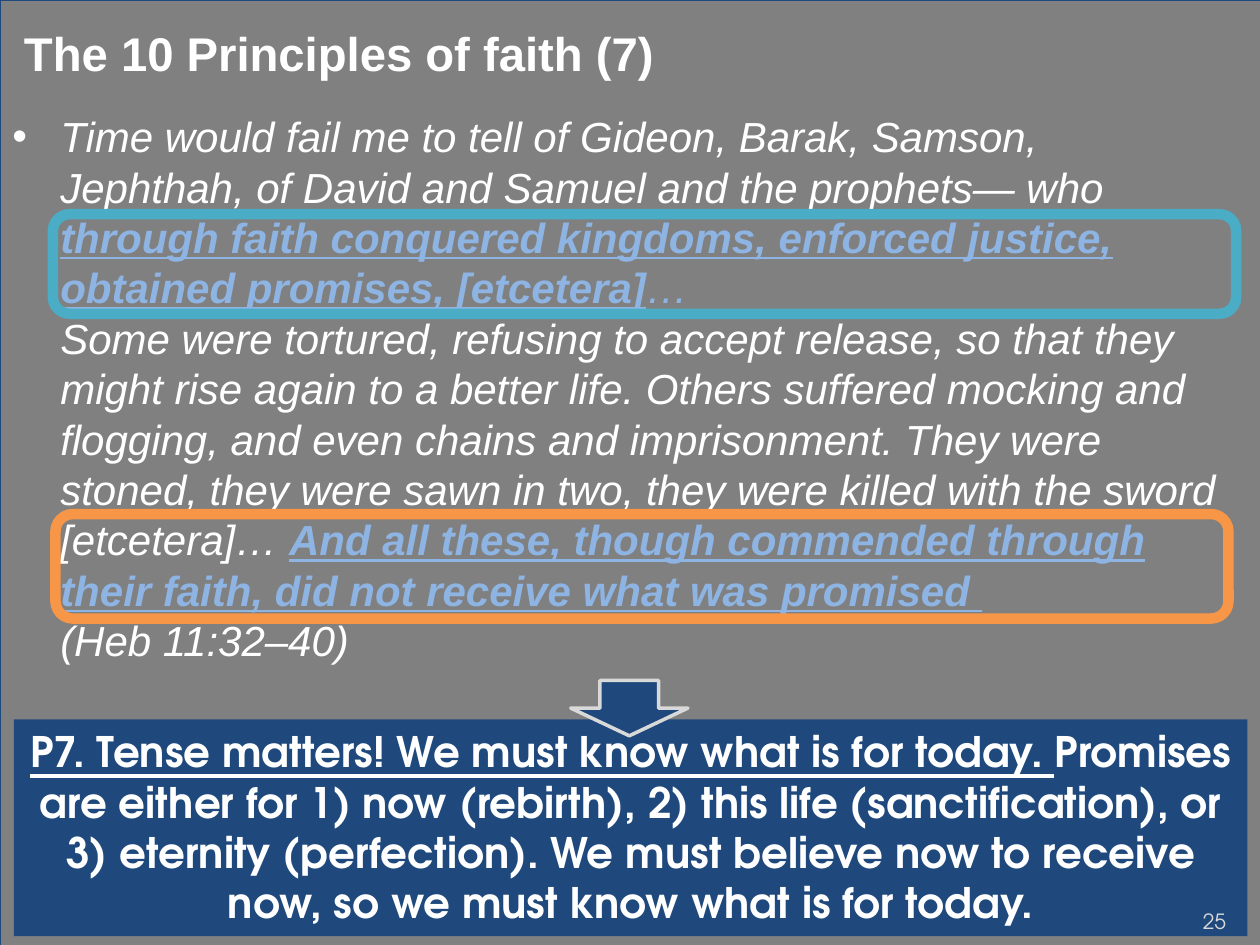
from lxml import etree
from pptx import Presentation
from pptx import util as u
from pptx.dml.color import RGBColor
from pptx.enum import shapes, text
from pptx.oxml.ns import qn

GREY = RGBColor(0x80, 0x80, 0x80)
PALE_GREY = RGBColor(0xD9, 0xD9, 0xD9)
WHITE = RGBColor(0xFF, 0xFF, 0xFF)
NAVY = RGBColor(0x1F, 0x49, 0x7D)
SKY = RGBColor(0x8E, 0xB4, 0xE3)
ORANGE = RGBColor(0xF7, 0x96, 0x46)
TEAL = RGBColor(0x4B, 0xAC, 0xC6)
SANS, GEOMETRIC = "Arial", "TeX Gyre Adventor"

VERSE = {"name": SANS, "size": 24, "italic": True, "color": WHITE}
VERSE_SKY = {**VERSE, "color": SKY}
KEY_VERSE = {**VERSE_SKY, "bold": True, "underline": True}
PRINCIPLE = {"name": GEOMETRIC, "size": 24, "bold": True, "color": WHITE}

TITLE = [("The 10 Principles of faith (7)",
          {"name": SANS, "size": 27, "bold": True, "color": WHITE})]
SCRIPTURE = [
    ("Time would fail me to tell of Gideon, Barak, Samson, Jephthah, of David "
     "and Samuel and the prophets— who ", VERSE),
    ("through faith conquered kingdoms, enforced justice, obtained promises, "
     "[etcetera]", KEY_VERSE),
    ("… \n", VERSE_SKY),
    ("Some were tortured, refusing to accept release, so that they might rise "
     "again to a better life. Others suffered mocking and flogging, and even "
     "chains and imprisonment. They were stoned, they were sawn in two, they "
     "were killed with the sword [etcetera]… ", VERSE),
    ("And all these, though commended through their faith, did not receive "
     "what was promised \n", KEY_VERSE),
    ("(Heb 11:32–40)", VERSE),
]
CONCLUSION = [
    ("P7. Tense matters! We must know what is for today. ",
     {**PRINCIPLE, "underline": True}),
    ("Promises are either for 1) now (rebirth), 2) this life (sanctification), "
     "or 3) eternity (perfection). We must believe now to receive now, so we "
     "must know what is for today.", PRINCIPLE),
]
PAGE = [("25", {"name": GEOMETRIC, "size": 12, "color": PALE_GREY})]


def inches(*lengths):
    return [u.Inches(length) for length in lengths]


def write(part, runs, align=text.PP_ALIGN.LEFT, anchor=text.MSO_ANCHOR.TOP):
    frame = part.text_frame
    frame.word_wrap = True
    frame.auto_size = text.MSO_AUTO_SIZE.NONE
    frame.vertical_anchor = anchor
    paragraph = frame.paragraphs[0]
    paragraph.alignment = align
    for words, style in runs:
        run = paragraph.add_run()
        run.text = words.rstrip("\n")
        for key, value in style.items():
            if key == "color":
                run.font.color.rgb = value
            else:
                setattr(run.font, key, u.Pt(value) if key == "size" else value)
        if words.endswith("\n"):
            paragraph.add_line_break()
            paragraph._p[-1].append(etree.fromstring(etree.tostring(run._r.rPr)))
    return paragraph


def draw(slide, preset, place, fill=None, line=None, width=0):
    part = slide.shapes.add_shape(preset, *inches(*place))
    part.shadow.inherit = False
    if fill is None:
        part.fill.background()
    else:
        part.fill.solid()
        part.fill.fore_color.rgb = fill
    if line is None:
        part.line.fill.background()
    else:
        part.line.color.rgb = line
        part.line.width = u.Pt(width)
    return part


def main():
    deck = Presentation()
    deck.slide_width, deck.slide_height = inches(10, 7.5)
    slide = deck.slides.add_slide(deck.slide_layouts[5])
    slide.background.fill.solid()
    slide.background.fill.fore_color.rgb = GREY
    preset = shapes.MSO_SHAPE

    draw(slide, preset.RECTANGLE, (0, 0, 10, 7.5), line=NAVY, width=0.25)

    banner = draw(slide, preset.RECTANGLE, (0.11, 5.71, 9.79, 1.72), fill=NAVY)
    write(banner, CONCLUSION, text.PP_ALIGN.CENTER)

    scripture = slide.shapes.add_textbox(*inches(0, 0.83, 9.81, 4.54))
    bullet = write(scripture, SCRIPTURE)._p.get_or_add_pPr()
    bullet.set("marL", str(u.Inches(0.38)))
    bullet.set("indent", str(-u.Inches(0.38)))
    etree.SubElement(bullet, qn("a:buFont")).set("typeface", SANS)
    etree.SubElement(bullet, qn("a:buChar")).set("char", "•")

    page = slide.shapes.add_textbox(*inches(7.5, 7.11, 2.33, 0.4))
    write(page, PAGE, text.PP_ALIGN.RIGHT, text.MSO_ANCHOR.MIDDLE)

    draw(slide, preset.DOWN_ARROW, (4.53, 5.4, 0.93, 0.44), NAVY, PALE_GREY, 2)

    title = slide.shapes.title
    title.left, title.top, title.width, title.height = inches(0.09, 0.14, 9.91, 0.69)
    write(title, TITLE)

    for place, color in (((0.44, 4.08, 9.31, 0.83), ORANGE),
                         ((0.42, 1.7, 9.39, 0.79), TEAL)):
        draw(slide, preset.ROUNDED_RECTANGLE, place, line=color, width=6)

    deck.save("out.pptx")


if __name__ == "__main__":
    main()
